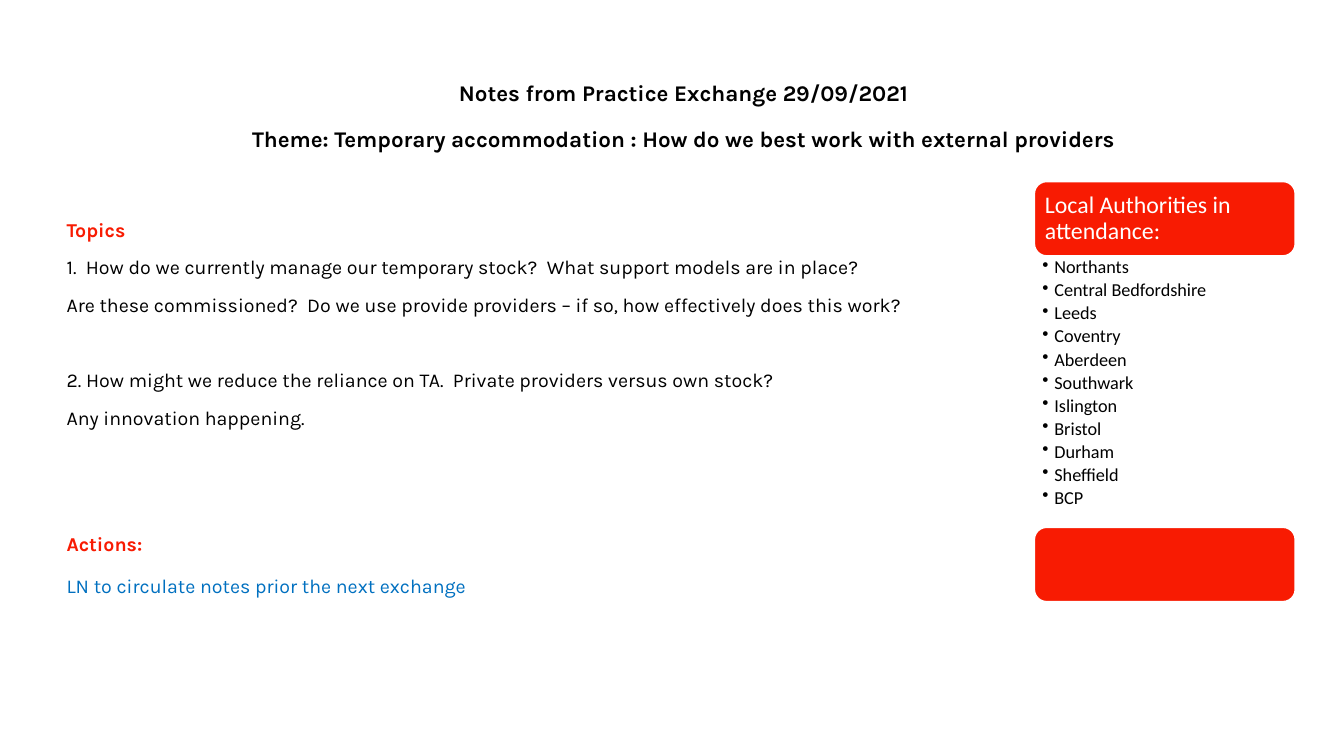
"""Build the practice exchange notes slide."""
from pptx import Presentation
from pptx import util as u
from pptx.dml.color import RGBColor
from pptx.enum import shapes, text
from pptx.oxml.xmlchemy import OxmlElement

WIDTH, HEIGHT = u.Inches(13.33), u.Inches(7.5)
RED = RGBColor(0xF8, 0x1B, 0x02)
BLUE = RGBColor(0x00, 0x70, 0xC0)
BLACK = RGBColor(0x00, 0x00, 0x00)
WHITE = RGBColor(0xFF, 0xFF, 0xFF)
LEFT, CENTER, JUSTIFY = text.PP_ALIGN.LEFT, text.PP_ALIGN.CENTER, text.PP_ALIGN.JUSTIFY

TITLE = (16, BLACK, True, CENTER, 1.2)
TOPIC_HEADING = (14, RED, True, LEFT, 1.2)
TOPIC = (14, BLACK, False, LEFT, 1.0)
ACTION_HEADING = (14, RED, True, JUSTIFY, 1.2)
ACTION = (14, BLUE, False, JUSTIFY, 1.2)

NOTES = [
    ("Notes from Practice Exchange 29/09/2021", TITLE, 10),
    ("Theme: Temporary accommodation : How do we best work with external providers", TITLE, 10),
    ("Topics", TOPIC_HEADING, 43.5),
    ("1.  How do we currently manage our temporary stock?  What support models are in place?", TOPIC, 10),
    ("Are these commissioned?  Do we use provide providers – if so, how effectively does this work?", TOPIC, 10),
    ("2. How might we reduce the reliance on TA.  Private providers versus own stock?", TOPIC, 37),
    ("Any innovation happening.", TOPIC, 10),
    ("Actions:", ACTION_HEADING, 70),
    ("LN to circulate notes prior the next exchange", ACTION, 10),
]
AUTHORITIES = [
    "Northants", "Central Bedfordshire", "Leeds", "Coventry", "Aberdeen", "Southwark",
    "Islington", "Bristol", "Durham", "Sheffield", "BCP",
]

PANEL_LEFT, PANEL_WIDTH = 76.95, 19.43
PANEL_TOP, BAR_HEIGHT, LIST_HEIGHT = 24, 9.87, 35.87


def area(left, top, width, height):
    """Turn percentages of the slide into a position and size."""
    return (int(WIDTH * left / 100), int(HEIGHT * top / 100),
            int(WIDTH * width / 100), int(HEIGHT * height / 100))


def set_insets(frame, left, top, right, bottom):
    """Set the inner margins of a text frame in inches."""
    frame.margin_left, frame.margin_top = u.Inches(left), u.Inches(top)
    frame.margin_right, frame.margin_bottom = u.Inches(right), u.Inches(bottom)


def set_bullet(paragraph, indent, character=None):
    """Give a paragraph a hanging bullet, or none."""
    properties = paragraph._p.get_or_add_pPr()
    properties.set("marL", str(u.Inches(indent)))
    properties.set("indent", str(-u.Inches(indent)))
    bullet = OxmlElement("a:buChar" if character else "a:buNone")
    if character:
        bullet.set("char", character)
    properties.append(bullet)


def write(paragraph, words, font_name, size, color, bold=False):
    """Put words in a paragraph and format them."""
    paragraph.text = words
    for run in paragraph.runs:
        font = run.font
        font.name, font.size, font.bold = font_name, u.Pt(size), bold
        font.color.rgb = color


def paragraphs_for(frame, count):
    """Return the given number of paragraphs of an empty frame."""
    return [frame.paragraphs[0]] + [frame.add_paragraph() for _ in range(count - 1)]


def fill_notes(slide):
    """Write the notes in the body placeholder."""
    body = slide.placeholders[1]
    body.left, body.top, body.width, body.height = area(4.2, 9.07, 93.32, 76.67)
    frame = body.text_frame
    frame.auto_size = text.MSO_AUTO_SIZE.NONE
    frame.vertical_anchor = text.MSO_ANCHOR.TOP
    for paragraph, (words, style, gap) in zip(paragraphs_for(frame, len(NOTES)), NOTES):
        size, color, bold, alignment, spacing = style
        write(paragraph, words, "Karla", size, color, bold)
        paragraph.alignment, paragraph.line_spacing = alignment, spacing
        paragraph.space_before, paragraph.space_after = u.Pt(gap), u.Pt(0)
        set_bullet(paragraph, 0)


def add_bar(panel, top, words=""):
    """Add a rounded red bar to the panel, with an optional heading."""
    bar = panel.shapes.add_shape(shapes.MSO_SHAPE.ROUNDED_RECTANGLE,
                                 *area(PANEL_LEFT, top, PANEL_WIDTH, BAR_HEIGHT))
    bar.shadow.inherit = False
    bar.fill.solid()
    bar.fill.fore_color.rgb = RED
    bar.line.color.rgb = WHITE
    bar.line.width = u.Pt(1.25)
    if words:
        frame = bar.text_frame
        set_insets(frame, 0.07, 0.07, 0.07, 0.07)
        frame.vertical_anchor = text.MSO_ANCHOR.MIDDLE
        paragraph = frame.paragraphs[0]
        write(paragraph, words, "Calibri", 17, WHITE)
        paragraph.alignment, paragraph.line_spacing = LEFT, 0.9


def add_authorities(panel, top):
    """Add the bulleted list of authorities to the panel."""
    box = panel.shapes.add_textbox(*area(PANEL_LEFT, top, PANEL_WIDTH, LIST_HEIGHT))
    frame = box.text_frame
    frame.word_wrap = True
    set_insets(frame, 0.08, 0.02, 0.13, 0.02)
    for paragraph, name in zip(paragraphs_for(frame, len(AUTHORITIES)), AUTHORITIES):
        write(paragraph, name, "Calibri", 13, BLACK)
        paragraph.level, paragraph.line_spacing = 1, 0.9
        paragraph.space_after = u.Pt(2.4)
        set_bullet(paragraph, 0.12, "•")


def main():
    """Create and save the presentation."""
    presentation = Presentation()
    presentation.slide_width, presentation.slide_height = WIDTH, HEIGHT
    slide = presentation.slides.add_slide(presentation.slide_layouts[1])
    title = slide.shapes.title._element
    title.getparent().remove(title)
    fill_notes(slide)
    panel = slide.shapes.add_group_shape()
    list_top = PANEL_TOP + BAR_HEIGHT
    add_bar(panel, PANEL_TOP, "Local Authorities in attendance:")
    add_authorities(panel, list_top)
    add_bar(panel, list_top + LIST_HEIGHT)
    presentation.save("out.pptx")


if __name__ == "__main__":
    main()
